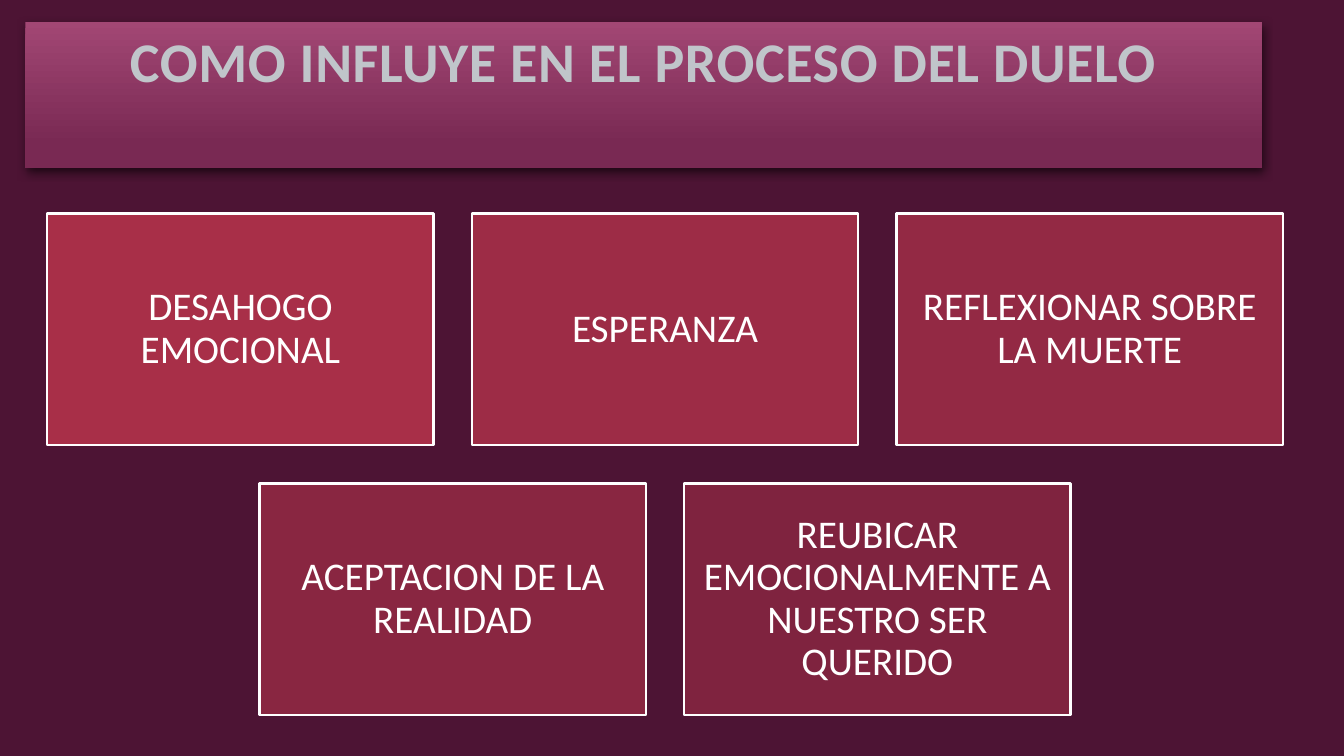
"""Builds a slide with a title band and five translucent boxes on grief."""
from dataclasses import dataclass

from lxml.etree import SubElement as Sub
from pptx import Presentation
from pptx.dml.color import RGBColor
from pptx.enum.shapes import MSO_SHAPE as Kind
from pptx.enum.text import MSO_ANCHOR as Anchor, MSO_AUTO_SIZE as Fit, PP_ALIGN as Align
from pptx.oxml import parse_xml
from pptx.oxml.ns import nsdecls, qn
from pptx.slide import Slide
from pptx.util import Cm, Pt

PLUM = RGBColor(0x4D, 0x14, 0x34)
PINK = RGBColor(0xA2, 0x47, 0x74)
WINE = RGBColor(0x79, 0x29, 0x53)
RED = RGBColor(0xB2, 0x32, 0x4B)
GREY = RGBColor(0xC0, 0xC5, 0xCA)
WHITE = RGBColor(0xFF, 0xFF, 0xFF)
FONT = "Calibri"

LEFT, TOP = 1.19, 5.38
STEP, DROP = 10.7, 6.8
WIDTH, HEIGHT = 9.74, 5.84

SHADE = f"""<a:effectLst {nsdecls("a")}>
  <a:outerShdw blurRad="88900" dist="38100" dir="5040000" algn="tl" rotWithShape="0">
    <a:srgbClr val="000000"><a:alpha val="60000"/></a:srgbClr>
  </a:outerShdw>
</a:effectLst>"""
EDGE = f"""<a:ln {nsdecls("a")} w="9525">
  <a:solidFill><a:srgbClr val="{GREY}"/></a:solidFill>
</a:ln>"""


@dataclass
class Box:
    text: str
    col: float
    row: int
    alpha: int


BOXES = [
    Box("DESAHOGO EMOCIONAL", 0, 0, 90),
    Box("ESPERANZA", 1, 0, 80),
    Box("REFLEXIONAR SOBRE LA MUERTE", 2, 0, 70),
    Box("ACEPTACION DE LA REALIDAD", 0.5, 1, 60),
    Box("REUBICAR EMOCIONALMENTE A NUESTRO SER QUERIDO", 1.5, 1, 50),
]


def write(frame, text: str, size: int, color: RGBColor, space: float):
    """Add one centred run to the frame and return it."""
    frame.word_wrap = True
    para = frame.paragraphs[0]
    para.alignment = Align.CENTER
    para.line_spacing = space
    run = para.add_run()
    run.text = text
    run.font.size = Pt(size)
    run.font.name = FONT
    run.font.color.rgb = color
    return run


def draw_title(slide: Slide, text: str) -> None:
    """Place and format the title band."""
    band = slide.shapes.title
    band.left, band.top = Cm(0.64), Cm(0.55)
    band.width, band.height = Cm(31.16), Cm(3.68)
    band.fill.gradient()
    band.fill.gradient_angle = 270
    for stop, color, place in zip(band.fill.gradient_stops, (PINK, WINE), (0, 0.84)):
        stop.color.rgb = color
        stop.position = place
    band.line.fill.background()
    band.element.spPr.append(parse_xml(SHADE))
    frame = band.text_frame
    frame.auto_size = Fit.NONE
    frame.vertical_anchor = Anchor.TOP
    run = write(frame, text, 40, GREY, 1.0)
    run.font.bold = True
    props = run.font._element
    props.set("spc", "50")
    props.insert(0, parse_xml(EDGE))


def draw_box(slide: Slide, box: Box) -> None:
    """Draw one box at its place in the grid."""
    shape = slide.shapes.add_shape(
        Kind.RECTANGLE, Cm(LEFT + box.col * STEP), Cm(TOP + box.row * DROP),
        Cm(WIDTH), Cm(HEIGHT))
    shape.shadow.inherit = False
    shape.fill.solid()
    shape.fill.fore_color.rgb = RED
    tint = shape.element.spPr.find(qn("a:solidFill")).find(qn("a:srgbClr"))
    Sub(tint, qn("a:alpha")).set("val", str(box.alpha * 1000))
    shape.line.color.rgb = WHITE
    shape.line.width = Pt(1.75)
    frame = shape.text_frame
    frame.margin_left = frame.margin_right = Cm(0.3)
    frame.margin_top = frame.margin_bottom = Cm(0.3)
    frame.vertical_anchor = Anchor.MIDDLE
    write(frame, box.text, 28, WHITE, 0.9)


def main() -> None:
    """Build and save the deck."""
    deck = Presentation()
    deck.slide_width, deck.slide_height = Cm(33.87), Cm(19.05)
    slide = deck.slides.add_slide(deck.slide_layouts[5])
    back = slide.background.fill
    back.solid()
    back.fore_color.rgb = PLUM
    draw_title(slide, "COMO INFLUYE EN EL PROCESO DEL DUELO")
    for box in BOXES:
        draw_box(slide, box)
    deck.save("out.pptx")


if __name__ == "__main__":
    main()
